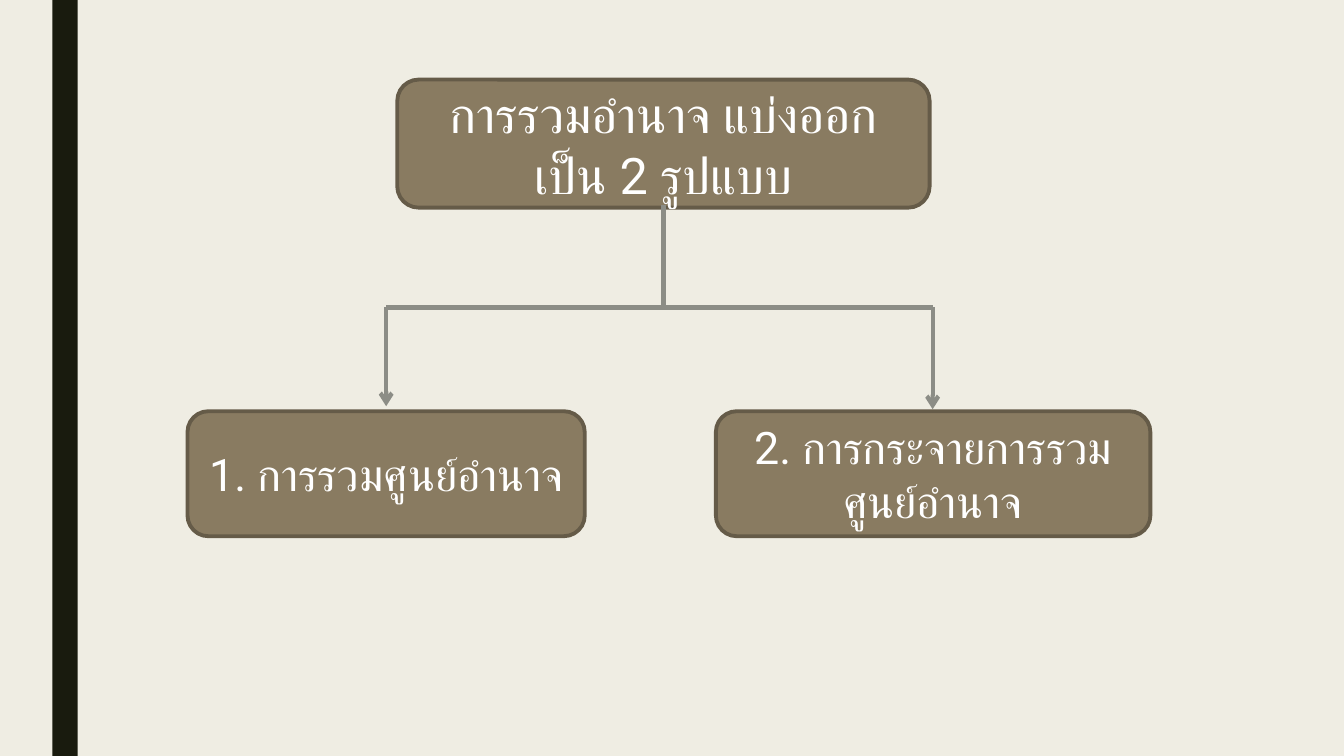
from lxml import etree
from pptx import Presentation
from pptx.dml.color import RGBColor
from pptx.enum.shapes import MSO_CONNECTOR as CONN, MSO_SHAPE as SHAPE
from pptx.enum.text import MSO_ANCHOR as ANCHOR, PP_ALIGN as ALIGN
from pptx.oxml.ns import qn
from pptx.util import Inches, Pt

TOPIC = ("การรวมอำนาจ แบ่งออกเป็น 2 รูปแบบ", (3.94, 0.79, 5.28, 1.27), 36)
FORMS = [
    ("1. การรวมศูนย์อำนาจ ", (1.86, 4.08, 3.94, 1.24), 32),
    ("2. การกระจายการรวมศูนย์อำนาจ", (7.1, 4.08, 4.31, 1.24), 32),
]
STEM_X, LEFT_X, MID_X, RIGHT_X = 6.58, 3.83, 6.64, 9.25
STEM_TOP, BAR_Y = 2.03, 3.05
LINES = [
    ((STEM_X, STEM_TOP), (STEM_X, BAR_Y), False),
    ((LEFT_X, BAR_Y), (MID_X, BAR_Y), False),
    ((MID_X, BAR_Y), (RIGHT_X, BAR_Y), False),
    ((LEFT_X, BAR_Y), (LEFT_X, 4.03), True),
    ((RIGHT_X, BAR_Y), (RIGHT_X, 4.06), True),
]
BAND = (0.52, 0, 0.25, 7.5)
COLORS = {"bg": "EFEDE3", "band": "191B0E", "box": "897B61",
          "edge": "655B48", "line": "8C8D86", "text": "FFFFFF"}
FONT = {"name": "Roboto"}
FRAME = {"word_wrap": True, "vertical_anchor": ANCHOR.MIDDLE,
         "margin_left": Inches(0.14), "margin_right": Inches(0.14)}


def color(name):
    return RGBColor.from_string(COLORS[name])


def paint(fill, name):
    fill.solid()
    fill.fore_color.rgb = color(name)


def set_all(obj, values):
    for key, value in values.items():
        setattr(obj, key, value)


def add_shape(s, kind, at, fill):
    sp = s.shapes.add_shape(kind, *map(Inches, at))
    sp.shadow.inherit = False
    paint(sp.fill, fill)
    return sp


def add_box(s, text, at, size):
    sp = add_shape(s, SHAPE.ROUNDED_RECTANGLE, at, "box")
    sp.line.color.rgb = color("edge")
    sp.line.width = Pt(2.75)
    tf = sp.text_frame
    set_all(tf, FRAME)
    p = tf.paragraphs[0]
    p.alignment = ALIGN.CENTER
    r = p.add_run()
    r.text = text
    set_all(r.font, {**FONT, "size": Pt(size)})
    r.font.color.rgb = color("text")


def add_line(s, start, end, arrow):
    cn = s.shapes.add_connector(CONN.STRAIGHT, *map(Inches, start + end))
    cn.line.color.rgb = color("line")
    cn.line.width = Pt(3)
    if arrow:
        etree.SubElement(cn.line._get_or_add_ln(), qn("a:tailEnd"), type="arrow")
    etree.SubElement(cn._element.spPr, qn("a:effectLst"))


def main():
    prs = Presentation()
    prs.slide_width, prs.slide_height = Inches(13.33), Inches(7.5)
    s = prs.slides.add_slide(prs.slide_layouts[6])
    paint(s.background.fill, "bg")
    add_shape(s, SHAPE.RECTANGLE, BAND, "band").line.fill.background()
    add_box(s, *TOPIC)
    for line in LINES:
        add_line(s, *line)
    for form in FORMS:
        add_box(s, *form)
    prs.save("out.pptx")


if __name__ == "__main__":
    main()
